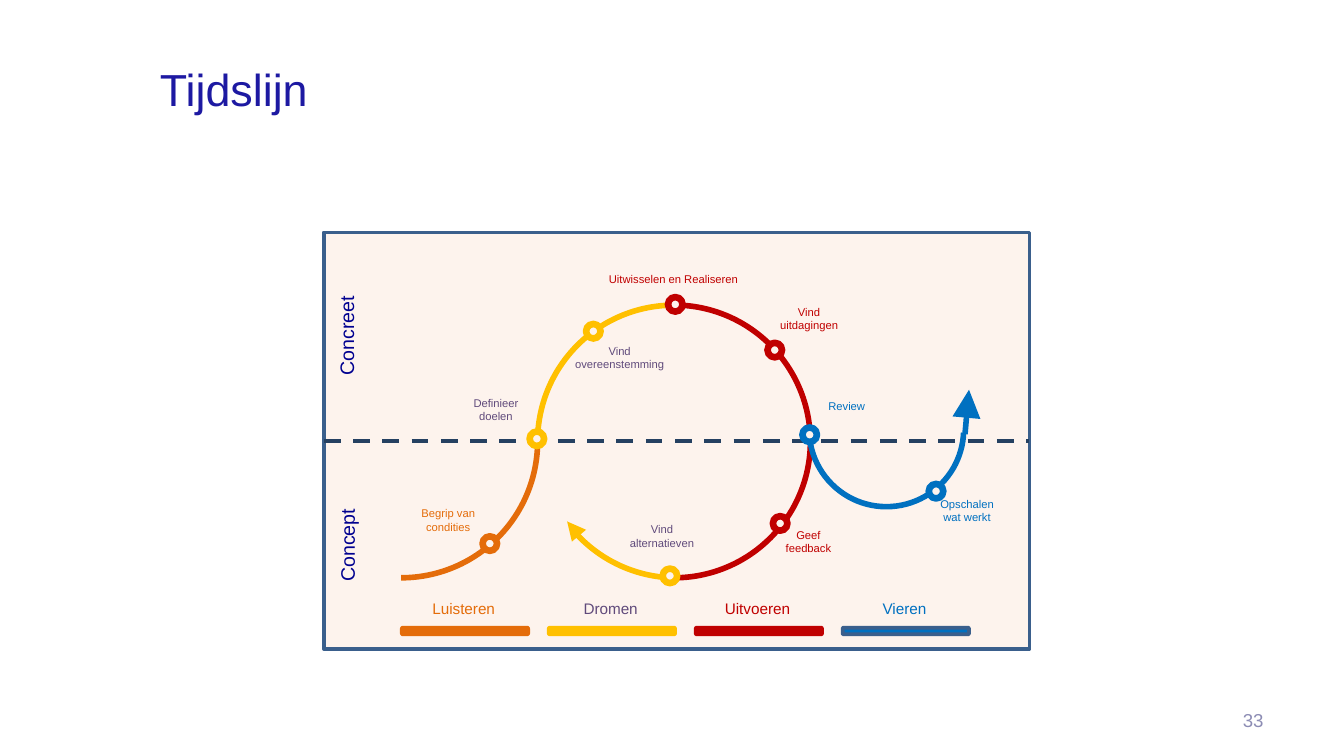
from dataclasses import dataclass

from lxml.etree import SubElement
from pptx import Presentation
from pptx.dml.color import RGBColor
from pptx.enum.dml import MSO_LINE
from pptx.enum.shapes import MSO_CONNECTOR, MSO_SHAPE
from pptx.enum.text import MSO_ANCHOR, MSO_AUTO_SIZE, PP_ALIGN
from pptx.oxml.ns import qn
from pptx.util import Inches, Pt


@dataclass(frozen=True)
class Theme:
    """Colours, font and type sizes of the slide."""
    font: str = "Arial"
    title: str = "1D19A2"
    number: str = "8C8CB4"
    axis: str = "000090"
    panel: str = "FDF3ED"
    border: str = "3A5F8C"
    divider: str = "254061"
    listen: str = "E46C0A"
    dream: str = "FFC000"
    dream_text: str = "604A7B"
    act: str = "C00000"
    celebrate: str = "0070C0"
    title_size: float = 24
    number_size: float = 10
    axis_size: float = 10.5
    phase_size: float = 8.2
    step_size: float = 6
    curve_width: float = 3
    outline_width: float = 2


THEME = Theme()
COLUMNS = 1000
ROWS = COLUMNS * 9 / 16
CELL = Inches(10) / COLUMNS

PANEL = (241, 173, 525, 310)
LOOP_LEFT, LOOP_TOP, LOOP_SIZE = 400, 227, 203
BAR_LEFT, BAR_TOP, BAR_WIDTH, BAR_HEIGHT = 299, 467, 94, 5
PHASE_PITCH = 109.33
RING, HOLE = 13, 11

CURVES = [
    (LOOP_LEFT - LOOP_SIZE, LOOP_TOP, LOOP_SIZE, 90, THEME.listen, None),
    (LOOP_LEFT, LOOP_TOP, LOOP_SIZE, 270, THEME.dream, None),
    (LOOP_LEFT, LOOP_TOP, LOOP_SIZE, 0, THEME.act, None),
    (LOOP_LEFT, LOOP_TOP, LOOP_SIZE, 90, THEME.act, None),
    (LOOP_LEFT + 2, LOOP_TOP, LOOP_SIZE, 180, THEME.dream, (162, 190.21)),
    (602, 262, 115, 180, THEME.celebrate, (109.44, 0)),
]
ARROWS = [
    ((432, 400), (422, 388), THEME.dream, 0.75),
    ((718, 323), (721, 290), THEME.celebrate, THEME.curve_width),
]
AXIS_LABELS = [("Concept", (221, 391, 75, 28)), ("Concreet", (218, 235, 80, 28))]
PHASES = [
    ("Luisteren", 68, THEME.listen, THEME.listen, THEME.listen),
    ("Dromen", 62, THEME.dream_text, THEME.dream, THEME.dream),
    ("Uitvoeren", 70, THEME.act, THEME.act, THEME.act),
    ("Vieren", 54, THEME.celebrate, THEME.celebrate, THEME.border),
]
STEPS = [
    ("Begrip van\ncondities", 303, 372, 61, THEME.listen),
    ("Definieer\ndoelen", 342, 290, 54, THEME.dream_text),
    ("Vind\novereenstemming", 417, 251, 88, THEME.dream_text),
    ("Uitwisselen en Realiseren", 442, 198, 118, THEME.act),
    ("Vind\nuitdagingen", 570, 222, 64, THEME.act),
    ("Geef\nfeedback", 574, 388, 55, THEME.act),
    ("Vind\nalternatieven", 458, 384, 69, THEME.dream_text),
    ("Review", 606, 292, 48, THEME.celebrate),
    ("Opschalen\nwat werkt", 689, 365, 61, THEME.celebrate),
]
MILESTONES = [
    (358, 398, THEME.listen),
    (393, 320, THEME.dream),
    (492, 422, THEME.dream),
    (574, 383, THEME.act),
    (690, 359, THEME.celebrate),
    (596, 317, THEME.celebrate),
    (570, 254, THEME.act),
    (496, 220, THEME.act),
    (435, 240, THEME.dream),
]


def cells(*counts):
    """Convert counts of grid cells to slide lengths."""
    return [round(count * CELL) for count in counts]


def assign(target, values):
    """Set each named attribute of the target."""
    for name, value in values.items():
        setattr(target, name, value)


def write(frame, text, size, color, align=PP_ALIGN.LEFT, **layout):
    """Fill a text frame with one formatted paragraph."""
    assign(frame, layout)
    paragraph = frame.paragraphs[0]
    paragraph.text = text
    paragraph.alignment = align
    for run in paragraph.runs:
        assign(run.font, {"name": THEME.font, "size": Pt(size)})
        run.font.color.rgb = RGBColor.from_string(color)


def add_label(shapes, text, area, size, color, align=PP_ALIGN.CENTER, rotation=0):
    """Add an unwrapped label that fits its text."""
    label = shapes.add_textbox(*cells(*area))
    label.rotation = rotation
    write(label.text_frame, text, size, color, align,
          word_wrap=False, auto_size=MSO_AUTO_SIZE.SHAPE_TO_FIT_TEXT)


def draw_line(line, color, width, **values):
    """Colour and size an outline or a connector."""
    line.color.rgb = RGBColor.from_string(color)
    assign(line, {"width": Pt(width), **values})


def add_form(shapes, preset, area, fill=None, outline=None, width=THEME.outline_width):
    """Add a flat preset shape with an optional fill and outline."""
    form = shapes.add_shape(preset, *cells(*area))
    form.shadow.inherit = False
    if fill:
        form.fill.solid()
        form.fill.fore_color.rgb = RGBColor.from_string(fill)
    else:
        form.fill.background()
    if outline:
        draw_line(form.line, outline, width)
    else:
        form.line.fill.background()
    return form


def add_curve(shapes, left, top, size, rotation, color, angles):
    """Add one arc of the timeline."""
    arc = add_form(shapes, MSO_SHAPE.ARC, (left, top, size, size),
                   outline=color, width=THEME.curve_width)
    arc.rotation = rotation
    for index, angle in enumerate(angles or ()):
        arc.adjustments[index] = angle


def add_straight(shapes, start, end, color, width, **values):
    """Add a straight connector without a shadow."""
    straight = shapes.add_connector(MSO_CONNECTOR.STRAIGHT, *cells(*start, *end))
    draw_line(straight.line, color, width, **values)
    SubElement(straight._element.spPr, qn("a:effectLst"))
    return straight


def add_arrow(shapes, start, end, color, width):
    """Add a connector with a large arrowhead at its end."""
    arrow = add_straight(shapes, start, end, color, width)
    SubElement(arrow.line._get_or_add_ln(), qn("a:tailEnd"),
               {"type": "triangle", "w": "lg", "len": "lg"})


def add_panel(shapes):
    """Add the panel and the dashed line that halves it."""
    panel = add_form(shapes, MSO_SHAPE.RECTANGLE, PANEL, THEME.panel, THEME.border)
    left, top, width, height = PANEL
    middle = top + height / 2
    divider = add_straight(shapes, (left, middle), (left + width, middle),
                           THEME.divider, 2.25, dash_style=MSO_LINE.DASH)
    divider.begin_connect(panel, 1)
    divider.end_connect(panel, 3)


def add_phase(shapes, index, name, width, text_color, fill, outline):
    """Add a phase bar with its name above."""
    left = BAR_LEFT + index * PHASE_PITCH
    add_form(shapes, MSO_SHAPE.ROUNDED_RECTANGLE,
             (left, BAR_TOP, BAR_WIDTH, BAR_HEIGHT), fill, outline)
    add_label(shapes, name, (left + (BAR_WIDTH - width) / 2 - 1, 441, width, 24),
              THEME.phase_size, text_color)


def add_milestone(shapes, left, top, color):
    """Add a ring with a light centre."""
    inset = (RING - HOLE) / 2
    add_form(shapes, MSO_SHAPE.OVAL, (left + inset, top + inset, HOLE, HOLE), THEME.panel)
    ring = add_form(shapes, MSO_SHAPE.DONUT, (left, top, RING, RING), color, color)
    ring.adjustments[0] = 0.17


def main():
    """Build the timeline slide."""
    deck = Presentation()
    deck.slide_width, deck.slide_height = cells(COLUMNS, ROWS)
    slide = deck.slides.add_slide(deck.slide_layouts[5])
    title = slide.shapes.title
    assign(title, dict(zip(("left", "top", "width", "height"), cells(109, 23, 841, 68))))
    write(title.text_frame, "Tijdslijn", THEME.title_size, THEME.title,
          vertical_anchor=MSO_ANCHOR.BOTTOM, auto_size=MSO_AUTO_SIZE.NONE)
    number = slide.shapes.add_textbox(*cells(717, 521, 233, 30))
    write(number.text_frame, "33", THEME.number_size, THEME.number, PP_ALIGN.RIGHT,
          word_wrap=True, vertical_anchor=MSO_ANCHOR.MIDDLE)

    timeline = slide.shapes.add_group_shape().shapes
    add_panel(timeline)
    for text, area in AXIS_LABELS:
        add_label(timeline, text, area, THEME.axis_size, THEME.axis, PP_ALIGN.LEFT, 270)
    for curve in CURVES:
        add_curve(timeline, *curve)
    for arrow in ARROWS:
        add_arrow(timeline, *arrow)
    for index, phase in enumerate(PHASES):
        add_phase(timeline, index, *phase)
    for text, left, top, width, color in STEPS:
        height = 20 + 10 * text.count("\n")
        add_label(timeline, text, (left, top, width, height), THEME.step_size, color)
    for milestone in MILESTONES:
        add_milestone(timeline, *milestone)
    deck.save("out.pptx")


if __name__ == "__main__":
    main()
